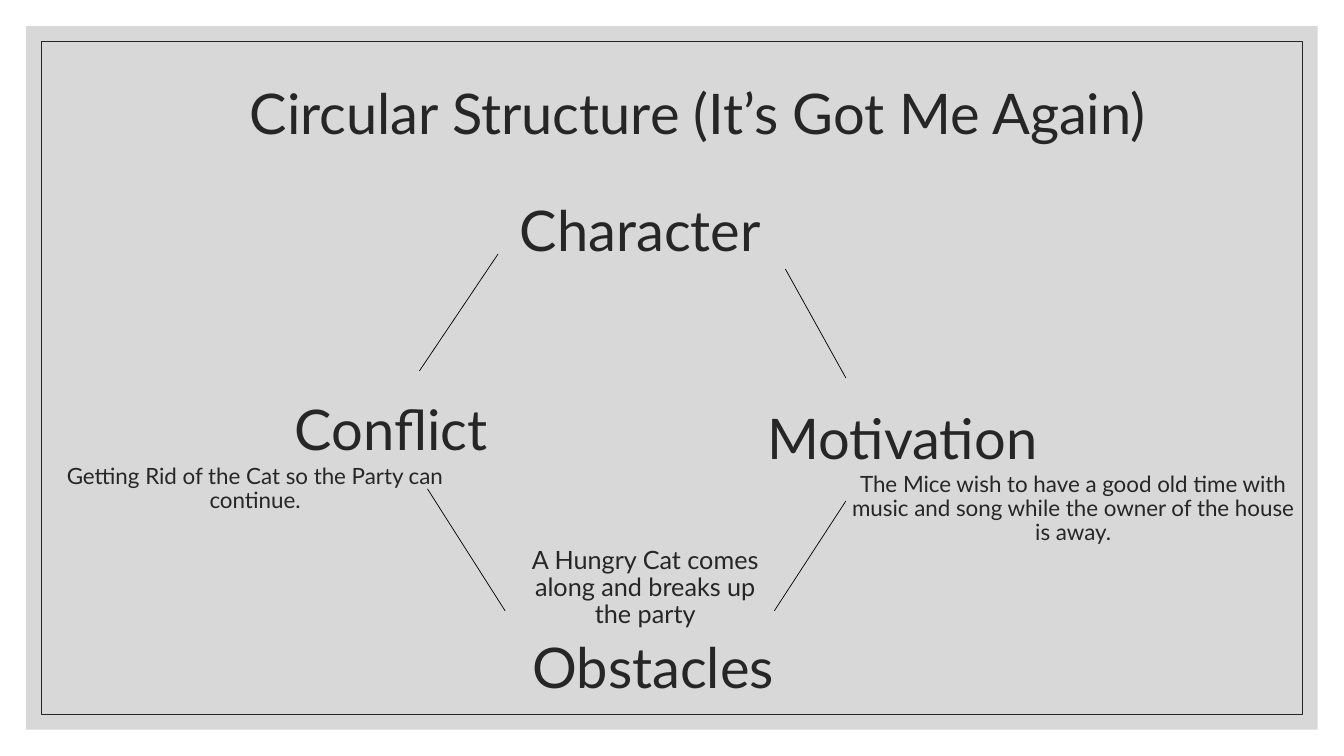
"""Build the circular story structure slide."""
from dataclasses import dataclass

from lxml import etree
from pptx import Presentation
from pptx.dml.color import RGBColor
from pptx.enum import shapes, text
from pptx.oxml import ns
from pptx.util import Inches, Pt


@dataclass(frozen=True)
class Theme:
    font: str = "Lato"
    ink: RGBColor = RGBColor(0x26, 0x26, 0x26)
    panel: RGBColor = RGBColor(0xBF, 0xBF, 0xBF)
    panel_opacity: int = 60
    link: RGBColor = RGBColor(0, 0, 0)
    line_width: float = 0.5
    heading_size: int = 40
    obstacle_size: int = 18
    note_size: int = 16
    line_spacing: float = 0.9


@dataclass(frozen=True)
class Stage:
    name: str
    left: float
    top: float


@dataclass(frozen=True)
class Note:
    wording: str
    left: float
    top: float
    width: float
    height: float
    size: int


@dataclass(frozen=True)
class Link:
    start: tuple[float, float]
    end: tuple[float, float]


THEME = Theme()
SLIDE_WIDTH, SLIDE_HEIGHT = 13.33, 7.5
STAGE_WIDTH, STAGE_HEIGHT = 2.94, 0.94
PANEL_MARGIN, FRAME_MARGIN = 0.26, 0.41

STAGES = [
    Stage("Character", 4.88, 1.85),
    Stage("Motivation", 7.48, 3.91),
    Stage("Obstacles", 5.01, 6.18),
    Stage("Conflict", 2.41, 3.82),
]
NOTES = [
    Note("The Mice wish to have a good old time with music and song while the owner of the house is away.",
         8.31, 4.02, 4.67, 2.07, THEME.note_size),
    Note("A Hungry Cat comes along and breaks up the party",
         5.03, 5.33, 2.74, 1.01, THEME.obstacle_size),
    Note("Getting Rid of the Cat so the Party can continue.",
         0.47, 3.86, 4.12, 1.98, THEME.note_size),
]
LINKS = [
    Link((7.79, 2.67), (8.39, 3.75)),
    Link((8.39, 4.97), (7.68, 6.06)),
    Link((4.94, 2.52), (4.16, 3.68)),
    Link((4.24, 4.85), (5.01, 6.06)),
]


def add_inset_rectangle(slide, margin: float):
    """Add a rectangle set in from every slide edge by the margin."""
    shape = slide.shapes.add_shape(
        shapes.MSO_SHAPE.RECTANGLE, Inches(margin), Inches(margin),
        Inches(SLIDE_WIDTH - 2 * margin), Inches(SLIDE_HEIGHT - 2 * margin))
    shape.shadow.inherit = False
    return shape


def add_background(slide) -> None:
    """Add the translucent panel and the thin frame inside it."""
    panel = add_inset_rectangle(slide, PANEL_MARGIN)
    panel.fill.solid()
    panel.fill.fore_color.rgb = THEME.panel
    panel.line.fill.background()
    color = panel.element.spPr.find(".//" + ns.qn("a:srgbClr"))
    etree.SubElement(color, ns.qn("a:alpha"), val=str(THEME.panel_opacity * 1000))

    frame = add_inset_rectangle(slide, FRAME_MARGIN)
    frame.fill.background()
    frame.line.color.rgb = THEME.ink
    frame.line.width = Pt(THEME.line_width)


def add_text(slide, wording: str, *, left: float, top: float, width: float,
             height: float, size: int = THEME.heading_size) -> None:
    """Add centred, wrapping text in a box."""
    box = slide.shapes.add_textbox(Inches(left), Inches(top), Inches(width), Inches(height))
    frame = box.text_frame
    frame.word_wrap = True
    frame.vertical_anchor = text.MSO_ANCHOR.MIDDLE
    paragraph = frame.paragraphs[0]
    paragraph.alignment = text.PP_ALIGN.CENTER
    paragraph.line_spacing = THEME.line_spacing
    run = paragraph.add_run()
    run.text = wording
    run.font.name = THEME.font
    run.font.size = Pt(size)
    run.font.color.rgb = THEME.ink


def add_link(slide, link: Link) -> None:
    """Add a thin straight line between two stages."""
    connector = slide.shapes.add_connector(
        shapes.MSO_CONNECTOR.STRAIGHT,
        *(Inches(value) for value in (*link.start, *link.end)))
    connector.line.color.rgb = THEME.link
    connector.line.width = Pt(THEME.line_width)
    etree.SubElement(connector.element.spPr, ns.qn("a:effectLst"))


def main() -> None:
    """Build and save the presentation."""
    presentation = Presentation()
    presentation.slide_width = Inches(SLIDE_WIDTH)
    presentation.slide_height = Inches(SLIDE_HEIGHT)
    slide = presentation.slides.add_slide(presentation.slide_layouts[6])

    add_background(slide)
    add_text(slide, "Circular Structure (It’s Got Me Again)",
             left=1.25, top=0.69, width=11.34, height=0.92)
    for note in NOTES:
        add_text(slide, note.wording, left=note.left, top=note.top,
                 width=note.width, height=note.height, size=note.size)
    for stage in STAGES:
        add_text(slide, stage.name, left=stage.left, top=stage.top,
                 width=STAGE_WIDTH, height=STAGE_HEIGHT)
    for link in LINKS:
        add_link(slide, link)

    presentation.save("out.pptx")


if __name__ == "__main__":
    main()
